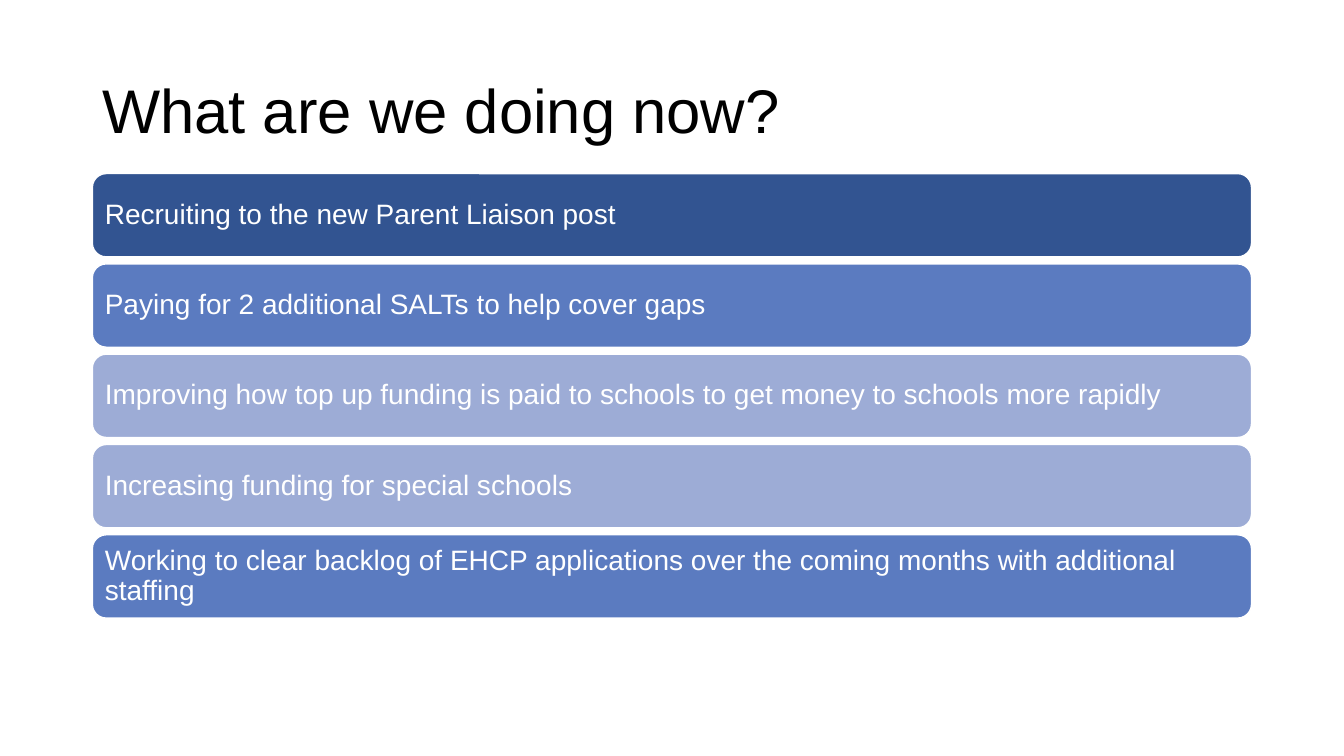
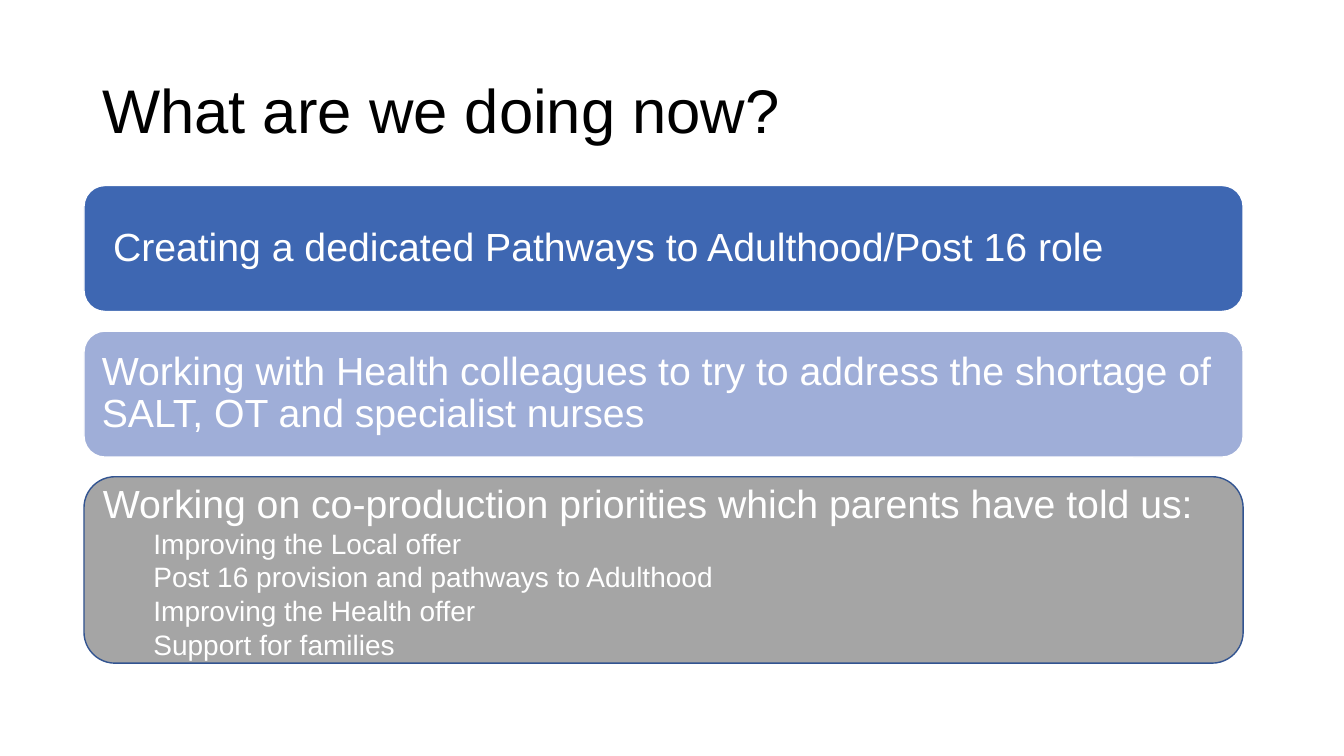
from pptx import Presentation
from pptx.dml.color import RGBColor
from pptx.enum.shapes import MSO_SHAPE
from pptx.enum.text import MSO_ANCHOR, PP_ALIGN
from pptx.util import Pt

FONT = "Arial"
BLACK, WHITE = "000000", "FFFFFF"
NAVY, BLUE, MID_BLUE = "325491", "3E67B2", "5B7BC0"
PALE_BLUE, LAVENDER, GREY = "9DACD6", "9FAED8", "A5A5A5"
TITLE_BOX = (66, 28.8, 828, 104.4)

ACTIONS = [
    ("Recruiting to the new Parent Liaison post", NAVY),
    ("Paying for 2 additional SALTs to help cover gaps", MID_BLUE),
    ("Improving how top up funding is paid to schools to get money to schools more rapidly", PALE_BLUE),
    ("Increasing funding for special schools", PALE_BLUE),
    ("Working to clear backlog of EHCP applications over the coming months with additional staffing", MID_BLUE),
]
PARTNER_WORK = [
    ("Creating a dedicated Pathways to Adulthood/Post 16 role", BLUE, 8),
    ("Working with Health colleagues to try to address the shortage of SALT, OT and specialist nurses", LAVENDER, 0),
]
PRIORITIES_HEADING = "Working on co-production priorities which parents have told us:"
PRIORITIES = [
    "Improving the Local offer",
    "Post 16 provision and pathways to Adulthood",
    "Improving the Health offer",
    "Support for families",
]


def rgb(color):
    """Turn a hex string into a colour."""
    return RGBColor.from_string(color)


def write(p, text, size, color=WHITE, indent=0, spacing=None):
    """Fill a paragraph with left-aligned text in the shared font."""
    p.text = text
    p.alignment = PP_ALIGN.LEFT
    p.line_spacing = spacing
    pPr = p._p.get_or_add_pPr()
    pPr.set("marL", str(Pt(indent)))
    pPr.set("indent", "0")
    font = p.runs[0].font
    font.name, font.size = FONT, Pt(size)
    font.color.rgb = rgb(color)


def add_titled_slide(prs, title):
    """Add a blank slide with the shared title."""
    s = prs.slides.add_slide(prs.slide_layouts[6])
    tf = s.shapes.add_textbox(*map(Pt, TITLE_BOX)).text_frame
    tf.word_wrap = True
    tf.vertical_anchor = MSO_ANCHOR.MIDDLE
    write(tf.paragraphs[0], title, 44, BLACK, spacing=0.9)
    return s


def add_bar(s, box, fill, line=WHITE, insets=(7.2, 3.6)):
    """Add a rounded bar and return its text frame."""
    sp = s.shapes.add_shape(MSO_SHAPE.ROUNDED_RECTANGLE, *map(Pt, box))
    sp.shadow.inherit = False
    sp.fill.solid()
    sp.fill.fore_color.rgb = rgb(fill)
    sp.line.color.rgb = rgb(line)
    sp.line.width = Pt(1)
    tf = sp.text_frame
    tf.word_wrap = True
    tf.vertical_anchor = MSO_ANCHOR.MIDDLE
    tf.margin_left = tf.margin_right = Pt(insets[0])
    tf.margin_top = tf.margin_bottom = Pt(insets[1])
    return tf


def add_bar_stack(s, box, items, gap, size, inset):
    """Divide a box into equal bars, one for each item."""
    left, top, width, height = box
    bar_height = (height - gap * (len(items) - 1)) / len(items)
    for i, (text, fill, *indent) in enumerate(items):
        bar = (left, top + i * (bar_height + gap), width, bar_height)
        tf = add_bar(s, bar, fill, insets=(inset, inset))
        write(tf.paragraphs[0], text, size, indent=sum(indent), spacing=0.9)


def add_priorities(s, box):
    """Add the outlined bar with a heading and indented priorities."""
    tf = add_bar(s, box, GREY, NAVY)
    write(tf.paragraphs[0], PRIORITIES_HEADING, 28)
    for text in PRIORITIES:
        p = tf.add_paragraph()
        p.level = 1
        write(p, text, 20, indent=36)


def main():
    """Build and save the presentation."""
    prs = Presentation()
    prs.slide_width, prs.slide_height = Pt(960), Pt(540)
    title = "What are we doing now?"
    s = add_titled_slide(prs, title)
    add_bar_stack(s, (66, 124, 828, 317.5), ACTIONS, 5, 20, 6)
    s = add_titled_slide(prs, title)
    add_bar_stack(s, (60, 132.5, 828, 194), PARTNER_WORK, 14, 28, 8.4)
    add_priorities(s, (60, 340.5, 828, 133.2))
    prs.save("out.pptx")


if __name__ == "__main__":
    main()
